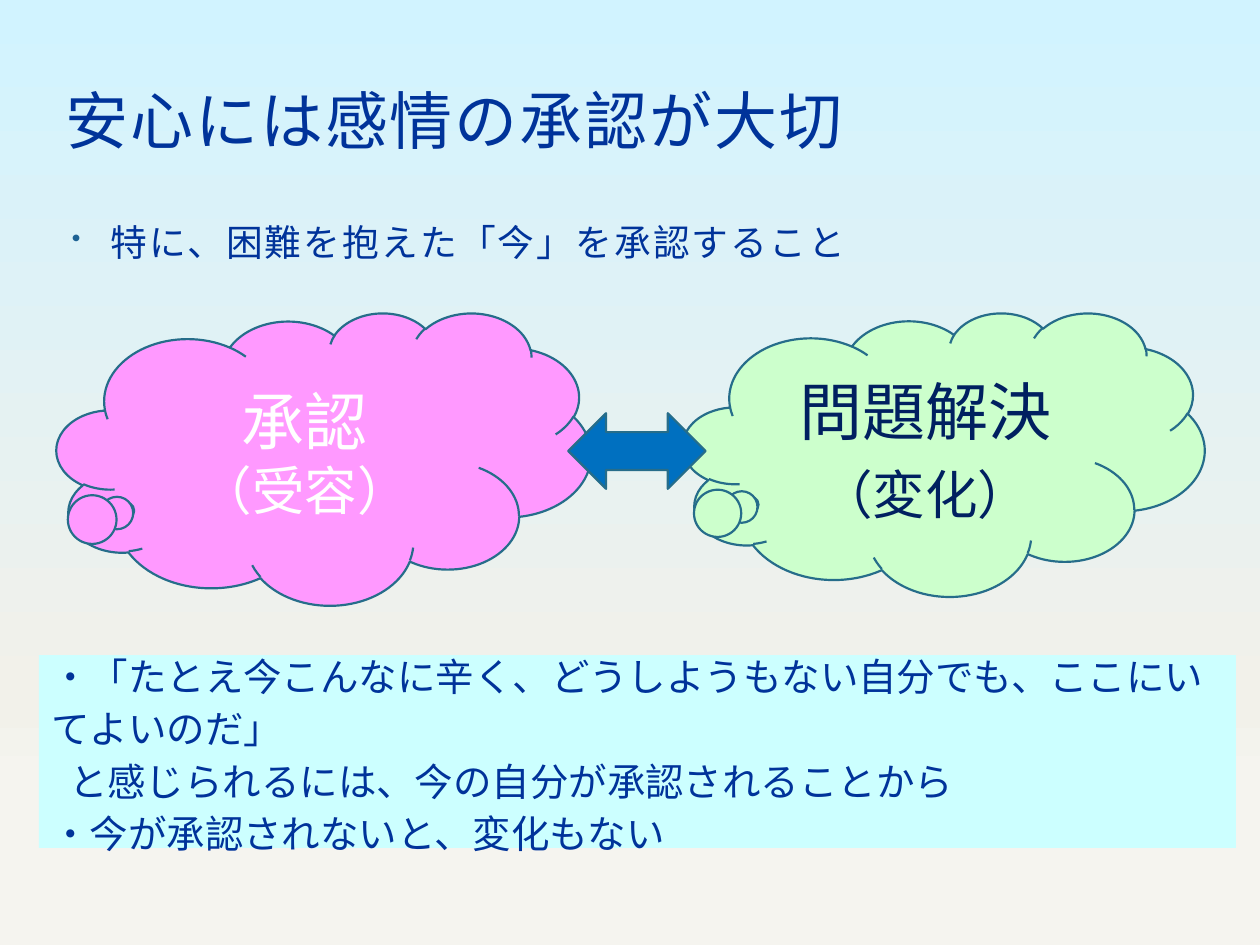
from dataclasses import dataclass

from lxml import etree
from pptx import Presentation
from pptx.dml.color import RGBColor
from pptx.enum.shapes import MSO_SHAPE
from pptx.enum.text import MSO_ANCHOR, MSO_AUTO_SIZE, PP_ALIGN
from pptx.oxml.ns import qn
from pptx.util import Inches, Pt

CLOUD = MSO_SHAPE.CLOUD_CALLOUT
DOUBLE_ARROW = MSO_SHAPE.LEFT_RIGHT_ARROW
RECTANGLE = MSO_SHAPE.RECTANGLE
MIDDLE, TOP = MSO_ANCHOR.MIDDLE, MSO_ANCHOR.TOP
LEFT, CENTER = PP_ALIGN.LEFT, PP_ALIGN.CENTER
NO_AUTOFIT = MSO_AUTO_SIZE.NONE
TITLE_ONLY = 5
CELL = Inches(0.1)


@dataclass(frozen=True)
class Theme:
    font: str = "Noto Sans CJK JP"
    navy: str = "00339A"
    dark: str = "002060"
    white: str = "FFFFFF"
    outline: str = "266D8A"
    bullet: str = "1D6294"
    pink: str = "FF99FF"
    green: str = "CCFFCC"
    blue: str = "0070C0"
    cyan: str = "CCFFFF"
    heading: int = 36
    subheading: int = 30
    note: int = 22
    lead: int = 21
    line: float = 1.25
    gradient: tuple = ((0, "D1F3FF"), (74, "F2F1EA"), (83, "F5F4EF"), (100, "F6F5F0"))


THEME = Theme()


@dataclass(frozen=True)
class Box:
    column: float
    row: float
    columns: float
    rows: float

    def lengths(self):
        return [round(value * CELL) for value in (self.column, self.row, self.columns, self.rows)]


def add_element(parent, tag, **attributes):
    return etree.SubElement(parent, qn(tag), {key: str(value) for key, value in attributes.items()})


def paint_background(slide):
    slide.background.fill.gradient()
    gradient = slide.element.find(".//" + qn("a:gradFill"))
    for child in list(gradient):
        gradient.remove(child)
    stops = add_element(gradient, "a:gsLst")
    for position, color in THEME.gradient:
        stop = add_element(stops, "a:gs", pos=position * 1000)
        add_element(stop, "a:srgbClr", val=color)
    add_element(gradient, "a:lin", ang=90 * 60000, scaled=0)


def add_text_shadow(properties):
    effects = etree.Element(qn("a:effectLst"))
    shadow = add_element(effects, "a:outerShdw", blurRad=Pt(3), dist=Pt(3), dir=45 * 60000, algn="tl")
    color = add_element(shadow, "a:srgbClr", val="000000")
    add_element(color, "a:alpha", val=43000)
    properties.find(qn("a:latin")).addprevious(effects)


def write_paragraph(paragraph, text, *, size, color, align=LEFT, line_spacing=None,
                    before=0, after=0, tracking=None, shadow=False, indent=0):
    paragraph.alignment = align
    paragraph.line_spacing = line_spacing
    paragraph.space_before, paragraph.space_after = Pt(before), Pt(after)
    if indent:
        paragraph._p.get_or_add_pPr().set("indent", str(Inches(indent)))
    run = paragraph.add_run()
    run.text = text
    run.font.size, run.font.name = Pt(size), THEME.font
    run.font.color.rgb = RGBColor.from_string(color)
    properties = run.font._element
    add_element(properties, "a:ea", typeface=THEME.font)
    if tracking:
        properties.set("spc", str(round(tracking * 100)))
    if shadow:
        add_text_shadow(properties)


def set_frame(frame, anchor, padded=False):
    frame.word_wrap = True
    frame.auto_size = NO_AUTOFIT
    frame.vertical_anchor = anchor
    if padded:
        frame.margin_left = frame.margin_right = frame.margin_top = Inches(0.12)
        frame.margin_bottom = Inches(0.1)


def add_filled_shape(slide, preset, box, fill, outlined=True):
    shape = slide.shapes.add_shape(preset, *box.lengths())
    shape.shadow.inherit = False
    shape.fill.solid()
    shape.fill.fore_color.rgb = RGBColor.from_string(fill)
    if outlined:
        shape.line.color.rgb = RGBColor.from_string(THEME.outline)
        shape.line.width = Pt(THEME.line)
    else:
        shape.line.fill.background()
    set_frame(shape.text_frame, MIDDLE)
    return shape


def place_title(slide, box, text):
    title = slide.shapes.title
    title.left, title.top, title.width, title.height = box.lengths()
    set_frame(title.text_frame, MIDDLE, padded=True)
    write_paragraph(title.text_frame.paragraphs[0], text, size=THEME.heading, color=THEME.navy,
                    line_spacing=1.2, tracking=1.1, shadow=True)


def place_lead(slide, box, text):
    frame = slide.shapes.add_textbox(*box.lengths()).text_frame
    set_frame(frame, TOP, padded=True)
    paragraph = frame.paragraphs[0]
    write_paragraph(paragraph, text, size=THEME.lead, color=THEME.navy, before=4.2, after=4.5,
                    tracking=1.2, shadow=True, indent=-0.31)
    properties = paragraph._p.get_or_add_pPr()
    properties.set("marL", str(Inches(0.31)))
    bullet_color = add_element(properties, "a:buClr")
    add_element(bullet_color, "a:srgbClr", val=THEME.bullet)
    add_element(properties, "a:buSzPct", val=70000)
    add_element(properties, "a:buChar", char="•")


def place_cloud(slide, box, heading, subheading, fill, color, line_spacing=None):
    cloud = add_filled_shape(slide, CLOUD, box, fill)
    cloud.adjustments[0], cloud.adjustments[1] = -0.37, 0.178
    frame = cloud.text_frame
    write_paragraph(frame.paragraphs[0], heading, size=THEME.heading, color=color,
                    align=CENTER, line_spacing=line_spacing)
    write_paragraph(frame.add_paragraph(), subheading, size=THEME.subheading, color=color,
                    align=CENTER, line_spacing=line_spacing)


def place_comparison(slide, box):
    place_cloud(slide, Box(box.column, box.row, 42.4, box.rows),
                "承認", "（受容）", THEME.pink, THEME.white)
    place_cloud(slide, Box(box.column + box.columns - 41.4, box.row, 41.4, 22.5),
                "問題解決", "（変化）", THEME.green, THEME.dark, Pt(44.3))
    arrow_box = Box(box.column + 40.6, box.row + 8, 10.9, 6)
    add_filled_shape(slide, DOUBLE_ARROW, arrow_box, THEME.blue)


def place_note(slide, box, lines):
    frame = add_filled_shape(slide, RECTANGLE, box, THEME.cyan, outlined=False).text_frame
    for index, (text, indent) in enumerate(lines):
        paragraph = frame.add_paragraph() if index else frame.paragraphs[0]
        write_paragraph(paragraph, text, size=THEME.note, color=THEME.navy,
                        line_spacing=Pt(30), indent=indent)


def main():
    presentation = Presentation()
    presentation.slide_width, presentation.slide_height = 100 * CELL, 75 * CELL
    slide = presentation.slides.add_slide(presentation.slide_layouts[TITLE_ONLY])
    paint_background(slide)
    place_title(slide, Box(4, 5.1, 92, 7.3), "安心には感情の承認が大切")
    place_lead(slide, Box(4.5, 16.2, 76.1, 8.1), "特に、困難を抱えた「今」を承認すること")
    place_comparison(slide, Box(4.5, 24.8, 91.1, 23.2))
    place_note(slide, Box(3.1, 52, 95, 15.3), (
        ("・「たとえ今こんなに辛く、どうしようもない自分でも、ここにいてよいのだ」", 0),
        ("と感じられるには、今の自分が承認されることから", 0.14),
        ("・今が承認されないと、変化もない", 0),
    ))
    presentation.save("out.pptx")


if __name__ == "__main__":
    main()
